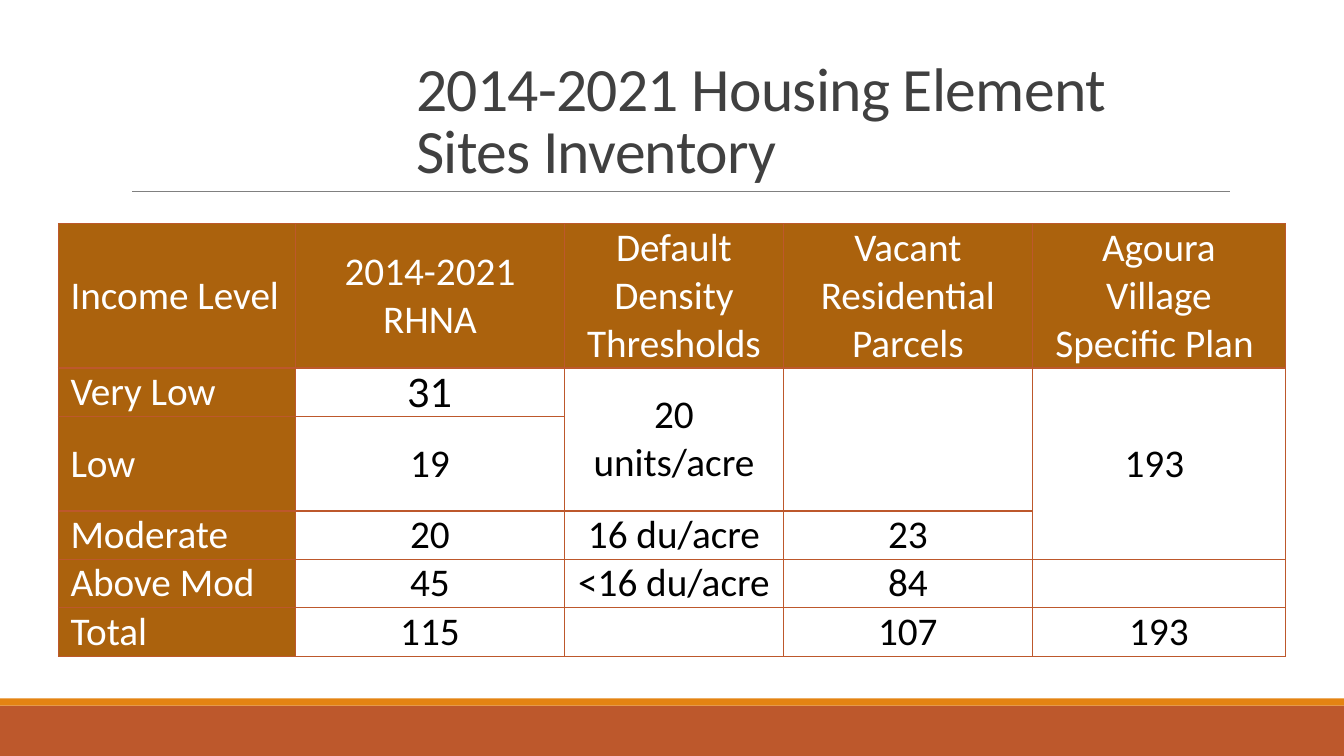
from lxml import etree
from pptx import Presentation
from pptx.dml.color import RGBColor
from pptx.enum.shapes import MSO_CONNECTOR, MSO_SHAPE
from pptx.enum.text import MSO_ANCHOR, PP_ALIGN
from pptx.oxml.ns import qn
from pptx.util import Inches, Pt

RECTANGLE = MSO_SHAPE.RECTANGLE
STRAIGHT = MSO_CONNECTOR.STRAIGHT
LEFT, CENTER = PP_ALIGN.LEFT, PP_ALIGN.CENTER
MIDDLE, BOTTOM = MSO_ANCHOR.MIDDLE, MSO_ANCHOR.BOTTOM

COLORS = {
    "rust": "BD582C",
    "orange": "E48312",
    "brown": "AB620D",
    "rule": "808080",
    "title": "404040",
    "white": "FFFFFF",
    "black": "000000",
}

COLUMN_WIDTHS = [2.35, 2.67, 2.17, 2.47, 2.51]
ROW_HEIGHTS = [1.43, 0.48, 0.94, 0.48, 0.48, 0.48]
INVENTORY = [
    ["Income Level", "2014-2021 RHNA", "Default Density Thresholds",
     "Vacant Residential Parcels", "Agoura Village Specific Plan "],
    ["Very Low", "31", "20 units/acre", "", "193 "],
    ["Low", "19", "", "", ""],
    ["Moderate", "20", "16 du/acre", "23", ""],
    ["Above Mod", "45", "<16 du/acre", "84", ""],
    ["Total", "115", "", "107", "193"],
]
MERGES = [((1, 2), (2, 2)), ((1, 3), (2, 3)), ((1, 4), (3, 4))]
LATO_CELL = (1, 1)


def rgb(name):
    return RGBColor.from_string(COLORS[name])


class SlideBuilder:
    font = "Calibri"
    body_size = 28
    title_size = 44

    def __init__(self, slide):
        self.slide = slide

    def band(self, top, height, color):
        band = self.slide.shapes.add_shape(
            RECTANGLE, 0, Inches(top), Inches(13.33), Inches(height))
        band.shadow.inherit = False
        band.fill.solid()
        band.fill.fore_color.rgb = rgb(color)
        band.line.fill.background()

    def rule(self, left, right, y):
        rule = self.slide.shapes.add_connector(
            STRAIGHT, Inches(left), Inches(y), Inches(right), Inches(y))
        rule.line.color.rgb = rgb("rule")
        rule.line.width = Pt(0.5)
        etree.SubElement(rule._element.spPr, qn("a:effectLst"))

    def style_run(self, run, size, color, font=None):
        run.font.name = font or self.font
        run.font.size = Pt(size)
        run.font.bold = False
        run.font.color.rgb = rgb(color)

    def title(self, text, left, top, width, height):
        box = self.slide.shapes.add_textbox(
            Inches(left), Inches(top), Inches(width), Inches(height))
        frame = box.text_frame
        frame.word_wrap = True
        frame.vertical_anchor = BOTTOM
        frame.text = text
        paragraph = frame.paragraphs[0]
        paragraph.line_spacing = 0.85
        run = paragraph.runs[0]
        self.style_run(run, self.title_size, "title")
        run.font._element.set("spc", "-50")

    def borders(self, cell):
        properties = cell._tc.get_or_add_tcPr()
        for position, side in enumerate(("lnL", "lnR", "lnT", "lnB")):
            line = etree.Element(qn(f"a:{side}"), w=str(Pt(1)))
            fill = etree.SubElement(line, qn("a:solidFill"))
            etree.SubElement(fill, qn("a:srgbClr"), val=COLORS["rust"])
            properties.insert(position, line)

    def margins(self, cell, row, column):
        if column == 0:
            left, right = 0.12, 0.07
        elif row == 0:
            left = right = 0.16
        else:
            left = right = 0.07
        cell.margin_left, cell.margin_right = Inches(left), Inches(right)
        cell.margin_top = cell.margin_bottom = 0

    def cell(self, cell, text, row, column):
        heading = row == 0 or column == 0
        self.margins(cell, row, column)
        cell.vertical_anchor = MIDDLE
        if heading:
            cell.fill.solid()
            cell.fill.fore_color.rgb = rgb("brown")
        else:
            cell.fill.background()
        self.borders(cell)
        if text:
            cell.text_frame.text = text
            paragraph = cell.text_frame.paragraphs[0]
            paragraph.alignment = LEFT if column == 0 else CENTER
            self.style_run(paragraph.runs[0], self.body_size,
                           "white" if heading else "black",
                           "Lato" if (row, column) == LATO_CELL else None)

    def table(self, left, top):
        table = self.slide.shapes.add_table(
            len(ROW_HEIGHTS), len(COLUMN_WIDTHS), Inches(left), Inches(top),
            Inches(sum(COLUMN_WIDTHS)), Inches(sum(ROW_HEIGHTS))).table
        table.horz_banding = False
        for column, width in zip(table.columns, COLUMN_WIDTHS):
            column.width = Inches(width)
        for row, height in zip(table.rows, ROW_HEIGHTS):
            row.height = Inches(height)
        for row, texts in enumerate(INVENTORY):
            for column, text in enumerate(texts):
                self.cell(table.cell(row, column), text, row, column)
        for first, last in MERGES:
            table.cell(*first).merge(table.cell(*last))


def main():
    deck = Presentation()
    deck.slide_width, deck.slide_height = Inches(13.33), Inches(7.5)
    builder = SlideBuilder(deck.slides.add_slide(deck.slide_layouts[6]))
    builder.band(7, 0.5, "rust")
    builder.band(6.93, 0.07, "orange")
    builder.rule(1.31, 12.2, 1.9)
    builder.title("2014-2021 Housing Element Sites Inventory",
                  4.03, 0.31, 8.17, 1.59)
    builder.table(0.58, 2.22)
    deck.save("out.pptx")


if __name__ == "__main__":
    main()
